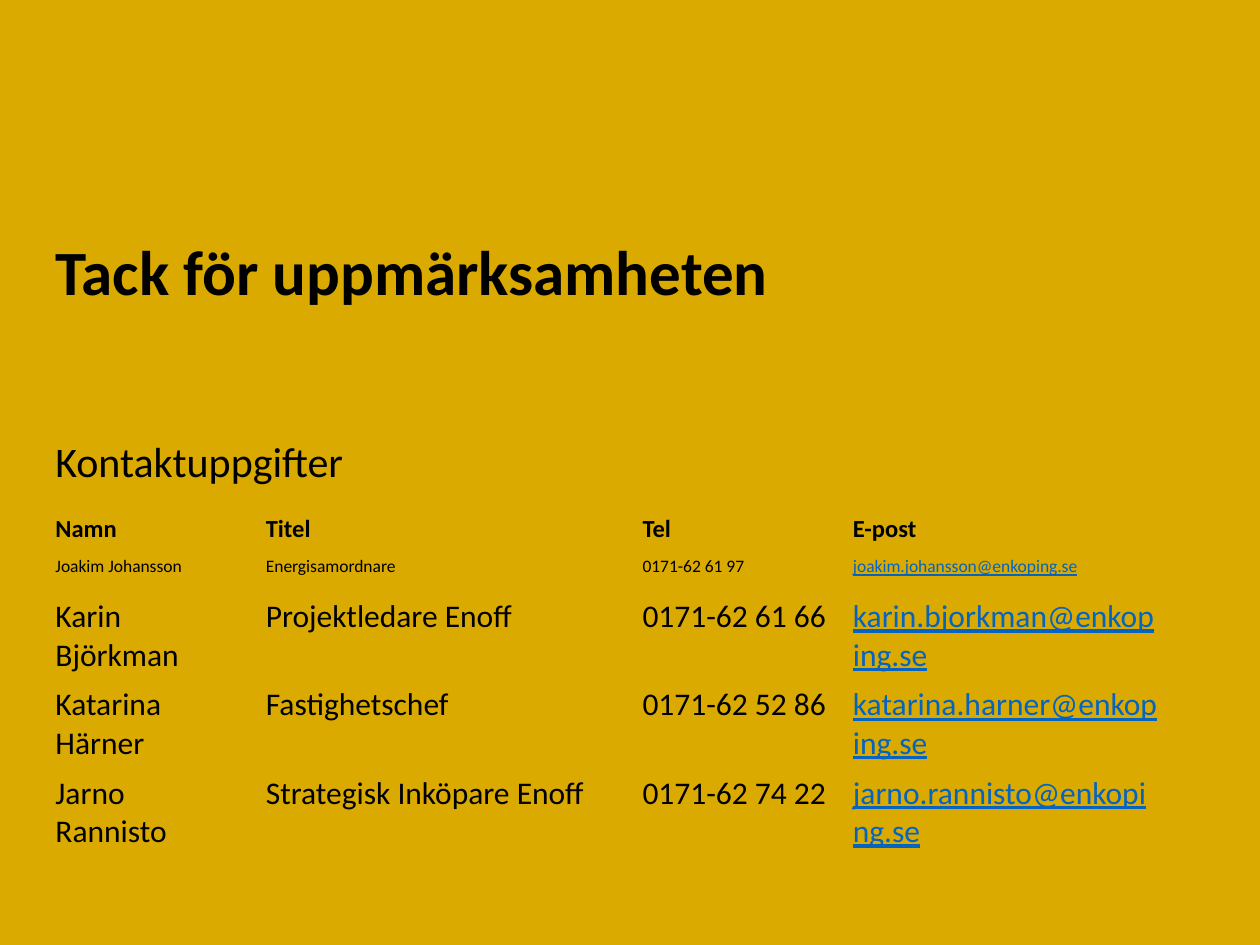
"""Build a closing slide with a contact table."""
from dataclasses import dataclass

import lxml.etree
import pptx
import pptx.dml.color
import pptx.oxml.ns
import pptx.util
from pptx.util import Inches

COLOURS = {"gold": "DAAA00", "text": "000000", "link": "0563C1"}
FONT = "Calibri"
LEFT = 0.34
COLUMN_WIDTHS = (1.67, 2.99, 1.67, 2.64)
ROW_HEIGHT = 0.33
PLAIN_TABLE_STYLE = "{2D5ABB26-0587-4C30-8999-92F81FD0307C}"


@dataclass(frozen=True)
class Heading:
    text: str
    top: float
    height: float
    size: int
    bold: bool = False
    line_spacing: float = 1.0


@dataclass(frozen=True)
class ContactRow:
    name: str
    title: str
    phone: str
    email: str
    size: int = 18
    header: bool = False


HEADINGS = (
    Heading("Tack för uppmärksamheten", 1.8, 1.24, 36, bold=True),
    Heading("Kontaktuppgifter", 3.45, 0.49, 24, line_spacing=0.9),
)
CONTACTS = (
    ContactRow("Namn", "Titel", "Tel", "E-post", 14, header=True),
    ContactRow("Joakim Johansson", "Energisamordnare", "0171-62 61 97", "joakim.johansson@enkoping.se", 10),
    ContactRow("Karin Björkman", "Projektledare Enoff", "0171-62 61 66", "karin.bjorkman@enkoping.se"),
    ContactRow("Katarina Härner", "Fastighetschef", "0171-62 52 86", "katarina.harner@enkoping.se"),
    ContactRow("Jarno Rannisto", "Strategisk Inköpare Enoff", "0171-62 74 22", "jarno.rannisto@enkoping.se"),
)


def rgb(colour: str) -> pptx.dml.color.RGBColor:
    """Return the named colour."""
    return pptx.dml.color.RGBColor.from_string(COLOURS[colour])


def write_text(frame, text: str, size: int, bold: bool = False, link: bool = False) -> None:
    """Write one formatted paragraph."""
    frame.text = text
    font = frame.paragraphs[0].runs[0].font
    font.name, font.size, font.bold = FONT, pptx.util.Pt(size), bold
    font.underline = link
    font.color.rgb = rgb("link" if link else "text")


def draw_heading(slide, heading: Heading) -> None:
    """Draw a heading across the slide."""
    box = slide.shapes.add_textbox(Inches(LEFT), Inches(heading.top), Inches(9.19), Inches(heading.height))
    box.text_frame.word_wrap = True
    write_text(box.text_frame, heading.text, heading.size, heading.bold)
    box.text_frame.paragraphs[0].line_spacing = heading.line_spacing


def add_border(cell, tag: str) -> None:
    """Add a one-point gold border to a cell side."""
    qn = pptx.oxml.ns.qn
    border = lxml.etree.SubElement(cell._tc.get_or_add_tcPr(), qn(tag), w=str(pptx.util.Pt(1)))
    fill = lxml.etree.SubElement(border, qn("a:solidFill"))
    lxml.etree.SubElement(fill, qn("a:srgbClr"), val=COLOURS["gold"])


def fill_cell(cell, tinted: bool) -> None:
    """Give a cell a translucent gold fill or none."""
    if not tinted:
        cell.fill.background()
        return
    qn = pptx.oxml.ns.qn
    cell.fill.solid()
    cell.fill.fore_color.rgb = rgb("gold")
    colour = cell._tc.tcPr.find(f"{qn('a:solidFill')}/{qn('a:srgbClr')}")
    lxml.etree.SubElement(colour, qn("a:alpha"), val="20000")


def draw_contacts(slide, contacts: tuple[ContactRow, ...]) -> None:
    """Draw the contact table."""
    frame = slide.shapes.add_table(
        len(contacts), len(COLUMN_WIDTHS), Inches(LEFT), Inches(4.03),
        Inches(sum(COLUMN_WIDTHS)), Inches(ROW_HEIGHT * len(contacts)),
    )
    table = frame.table
    table._tbl.tblPr.find(pptx.oxml.ns.qn("a:tableStyleId")).text = PLAIN_TABLE_STYLE
    for column, width in zip(table.columns, COLUMN_WIDTHS):
        column.width = Inches(width)
    for row_index, contact in enumerate(contacts):
        table.rows[row_index].height = Inches(ROW_HEIGHT)
        values = (contact.name, contact.title, contact.phone, contact.email)
        for column_index, value in enumerate(values):
            cell = table.cell(row_index, column_index)
            write_text(cell.text_frame, value, contact.size, contact.header, link="@" in value)
            if contact.header:
                add_border(cell, "a:lnT")
            if contact.header or contact is contacts[-1]:
                add_border(cell, "a:lnB")
            fill_cell(cell, tinted=row_index % 2 == 1)


def main() -> None:
    """Build and save the slide."""
    presentation = pptx.Presentation()
    presentation.slide_width, presentation.slide_height = Inches(10), Inches(7.5)
    slide = presentation.slides.add_slide(presentation.slide_layouts[6])
    slide.background.fill.solid()
    slide.background.fill.fore_color.rgb = rgb("gold")
    for heading in HEADINGS:
        draw_heading(slide, heading)
    draw_contacts(slide, CONTACTS)
    presentation.save("out.pptx")


if __name__ == "__main__":
    main()
